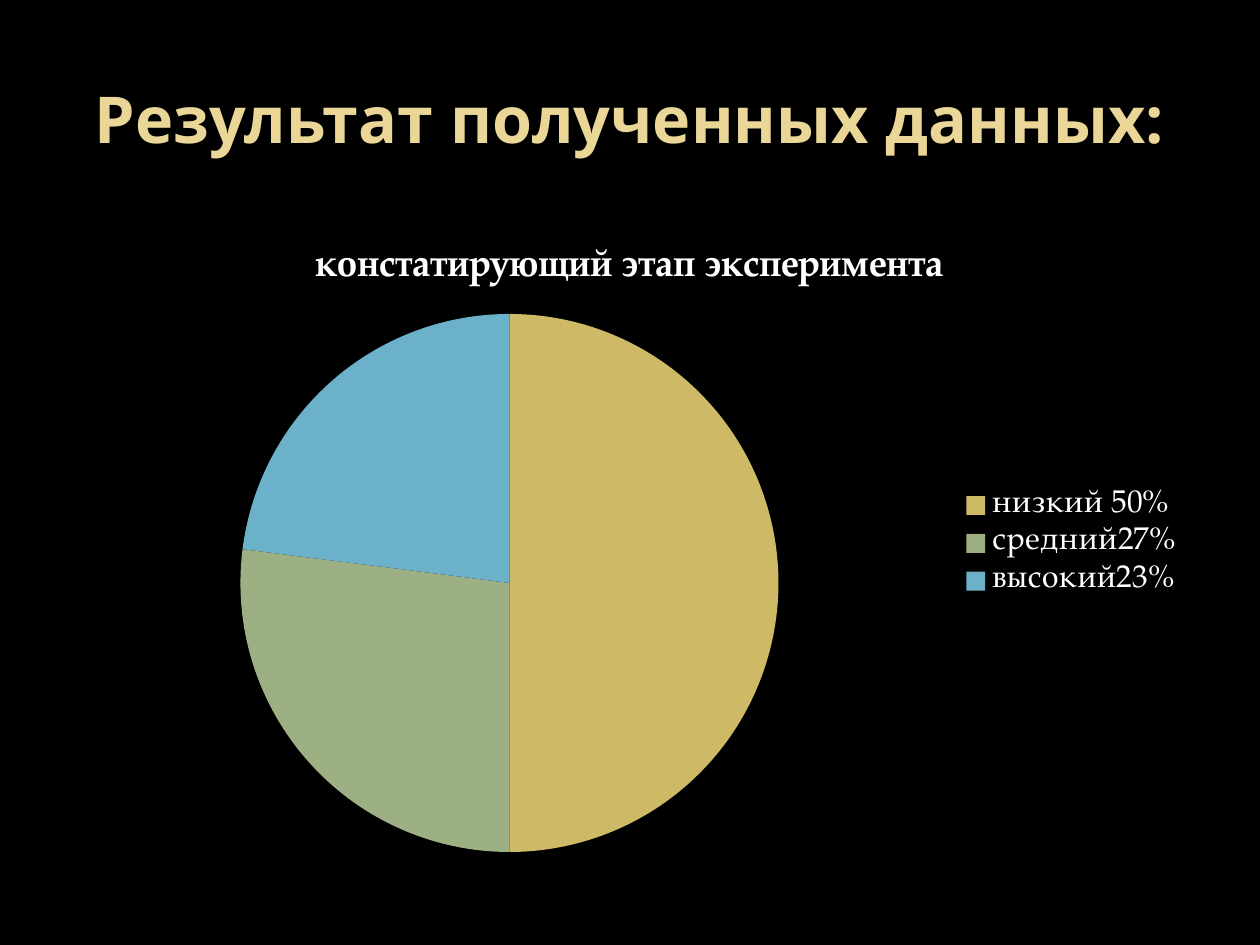
from pptx import Presentation
from pptx.chart.data import CategoryChartData as Data
from pptx.dml.color import RGBColor
from pptx.enum.chart import XL_CHART_TYPE as Kind, XL_LEGEND_POSITION as Side
from pptx.enum.text import MSO_ANCHOR as Anchor, PP_ALIGN as Align
from pptx.util import Inches, Pt

WIDE, HIGH = Inches(10), Inches(7.5)
HEAD, BODY = "Open Sans", "TeX Gyre Pagella"
WHITE, GOLD = "FFFFFF", "EAD696"
LEVELS = {
    "низкий 50%": (50, "CEB966"),
    "средний27%": (27, "9CB084"),
    "высокий23%": (23, "6BB1C9"),
}


def paint(fill, color):
    fill.solid()
    fill.fore_color.rgb = RGBColor.from_string(color)


def style(font, face=BODY, size=18, color=WHITE, bold=False):
    font.name, font.size, font.bold = face, Pt(size), bold
    paint(font.fill, color)


def write(frame, text, align=Align.CENTER, **look):
    para = frame.paragraphs[0]
    para.alignment = align
    run = para.add_run()
    run.text = text
    style(run.font, **look)


def share(x, y, w, h):
    """Turn shares of the slide into a box of lengths."""
    return int(x * WIDE), int(y * HIGH), int(w * WIDE), int(h * HIGH)


def add_title(slide, box, text):
    title = slide.shapes.title
    title.left, title.top, title.width, title.height = box
    frame = title.text_frame
    frame.word_wrap = True
    frame.vertical_anchor = Anchor.MIDDLE
    write(frame, text, face=HEAD, size=36.9, color=GOLD, bold=True)


def add_pie(slide, box, name, levels):
    data = Data()
    data.categories = list(levels)
    data.add_series(name, [value for value, _ in levels.values()])
    chart = slide.shapes.add_chart(Kind.PIE, *box, data).chart
    style(chart.font)

    chart.has_title = True
    write(chart.chart_title.text_frame, name, size=21.6, bold=True)
    chart.chart_title.include_in_layout = False

    chart.has_legend = True
    chart.legend.position = Side.RIGHT
    chart.legend.include_in_layout = False
    style(chart.legend.font)

    plot = chart.plots[0]
    plot.vary_by_categories = True
    for i, (_, color) in enumerate(levels.values()):
        form = plot.series[0].points[i].format
        paint(form.fill, color)
        form.line.fill.background()


def main():
    deck = Presentation()
    deck.slide_width, deck.slide_height = WIDE, HIGH
    slide = deck.slides.add_slide(deck.slide_layouts[5])
    paint(slide.background.fill, "000000")
    add_title(slide, share(0.05, 0.04, 0.9, 0.17), "Результат полученных данных:")
    add_pie(slide, share(0.05, 0.23, 0.9, 0.69),
            "констатирующий этап эксперимента", LEVELS)
    deck.save("out.pptx")


if __name__ == "__main__":
    main()
